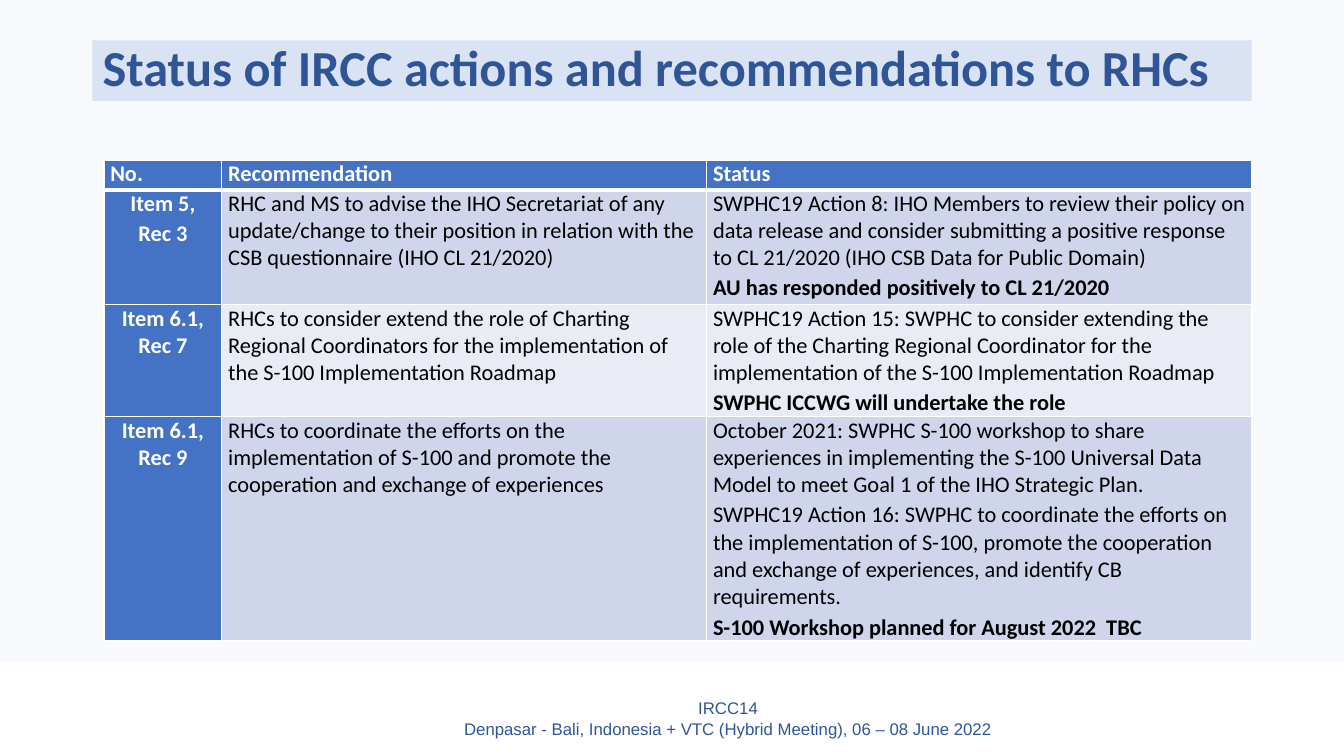
from lxml import etree
from pptx import Presentation
from pptx.dml.color import RGBColor
from pptx.enum.shapes import MSO_SHAPE
from pptx.enum.text import MSO_ANCHOR, MSO_AUTO_SIZE, PP_ALIGN
from pptx.oxml import parse_xml
from pptx.oxml.ns import nsdecls, qn
from pptx.util import Cm, Pt

WHITE = RGBColor(0xFF, 0xFF, 0xFF)
BLACK = RGBColor(0, 0, 0)
NAVY = RGBColor(0x2F, 0x55, 0x97)
PALE_BLUE = RGBColor(0xDA, 0xE3, 0xF3)
HEADER_BLUE = RGBColor(0x44, 0x72, 0xC4)
ROW_DARK = RGBColor(0xCF, 0xD5, 0xEA)
ROW_LIGHT = RGBColor(0xE9, 0xEB, 0xF5)
LEFT, CENTER = PP_ALIGN.LEFT, PP_ALIGN.CENTER
MIDDLE = MSO_ANCHOR.MIDDLE
RECTANGLE = MSO_SHAPE.RECTANGLE
NO_AUTOFIT = MSO_AUTO_SIZE.NONE

COLUMN_WIDTHS = [2.97, 12.22, 13.74]
ROW_HEIGHTS = [0.74, 2.9, 2.82, 5.64]
# Each cell is a list of paragraphs; the last status paragraph is the outcome.
ROWS = [
    [["No."], ["Recommendation"], ["Status"]],
    [["Item 5,", "Rec 3"],
     ["RHC and MS to advise the IHO Secretariat of any update/change to their "
      "position in relation with the CSB questionnaire (IHO CL 21/2020)"],
     ["SWPHC19 Action 8: IHO Members to review their policy on data release and "
      "consider submitting a positive response to CL 21/2020 (IHO CSB Data for "
      "Public Domain)",
      "AU has responded positively to CL 21/2020"]],
    [["Item 6.1, Rec 7"],
     ["RHCs to consider extend the role of Charting Regional Coordinators for "
      "the implementation of the S-100 Implementation Roadmap"],
     ["SWPHC19 Action 15: SWPHC to consider extending the role of the Charting "
      "Regional Coordinator for the implementation of the S-100 Implementation "
      "Roadmap",
      "SWPHC ICCWG will undertake the role"]],
    [["Item 6.1, Rec 9"],
     ["RHCs to coordinate the efforts on the implementation of S-100 and promote "
      "the cooperation and exchange of experiences"],
     ["October 2021: SWPHC S-100 workshop to share experiences in implementing "
      "the S-100 Universal Data Model to meet Goal 1 of the IHO Strategic Plan.",
      "SWPHC19 Action 16: SWPHC to coordinate the efforts on the implementation "
      "of S-100, promote the cooperation and exchange of experiences, and "
      "identify CB requirements.",
      "S-100 Workshop planned for August 2022  TBC"]],
]


def write(para, text, align, color, **font_format):
    para.text = text
    para.alignment = align
    para.font.color.rgb = color
    for name, value in font_format.items():
        setattr(para.font, name, value)


def add_border(cell, side, points):
    cell._tc.get_or_add_tcPr().append(parse_xml(
        f'<a:{side} {nsdecls("a")} w="{Pt(points)}"><a:solidFill>'
        f'<a:srgbClr val="{WHITE}"/></a:solidFill></a:{side}>'))


deck = Presentation()
deck.slide_width, deck.slide_height = Cm(33.87), Cm(19.05)
page = deck.slides.add_slide(deck.slide_layouts[5])

band = page.shapes.add_shape(RECTANGLE, 0, 0, deck.slide_width, Cm(16.71))
band.shadow.inherit = False
band.line.fill.background()
band.fill.solid()
band.fill.fore_color.rgb = PALE_BLUE
band_color = band._element.spPr.find(".//" + qn("a:srgbClr"))
etree.SubElement(band_color, qn("a:alpha"), val="21000")
page.shapes._spTree.insert(2, band._element)  # behind the title

title = page.shapes.title
title.left, title.top, title.width, title.height = Cm(2.33), Cm(1.02), Cm(29.21), Cm(1.52)
title.fill.solid()
title.fill.fore_color.rgb = PALE_BLUE
title.text_frame.auto_size = NO_AUTOFIT
title.text_frame.vertical_anchor = MIDDLE
heading = title.text_frame.paragraphs[0]
heading.line_spacing = 0.9
write(heading, "Status of IRCC actions and recommendations to RHCs", LEFT, NAVY,
      name="Calibri", size=Pt(36), bold=True)

footer = page.shapes.add_textbox(Cm(11), Cm(17.53), Cm(14.7), Cm(1.14))
footer.text_frame.word_wrap = True
footer.text_frame.vertical_anchor = MIDDLE
write(footer.text_frame.paragraphs[0],
      "IRCC14\vDenpasar - Bali, Indonesia + VTC (Hybrid Meeting), 06 – 08 June 2022",
      CENTER, NAVY, name="Arial", size=Pt(12))

table = page.shapes.add_table(len(ROWS), len(COLUMN_WIDTHS), Cm(2.62), Cm(4.04),
                              Cm(sum(COLUMN_WIDTHS)), Cm(sum(ROW_HEIGHTS))).table
for column, width in zip(table.columns, COLUMN_WIDTHS):
    column.width = Cm(width)
for row, height in zip(table.rows, ROW_HEIGHTS):
    row.height = Cm(height)

for r, row in enumerate(ROWS):
    for c, paragraphs in enumerate(row):
        cell = table.cell(r, c)
        cell.margin_left = cell.margin_right = Cm(0.16)
        cell.margin_top = cell.margin_bottom = 0
        borders = {"lnL": 1, "lnR": 1, "lnT": 3 if r == 1 else 1, "lnB": 3 if r == 0 else 1}
        for side, points in borders.items():
            add_border(cell, side, points)
        is_heading = r == 0 or c == 0
        cell.fill.solid()
        cell.fill.fore_color.rgb = (
            HEADER_BLUE if is_heading else ROW_DARK if r % 2 else ROW_LIGHT)
        for i, text in enumerate(paragraphs):
            para = cell.text_frame.paragraphs[0] if i == 0 else cell.text_frame.add_paragraph()
            if i:
                para.space_before = Pt(1.9)
            is_outcome = c == 2 and i == len(paragraphs) - 1
            write(para, text, CENTER if r and c == 0 else LEFT,
                  WHITE if is_heading else BLACK,
                  name="Calibri", size=Pt(16), bold=is_heading or is_outcome)

deck.save("out.pptx")
